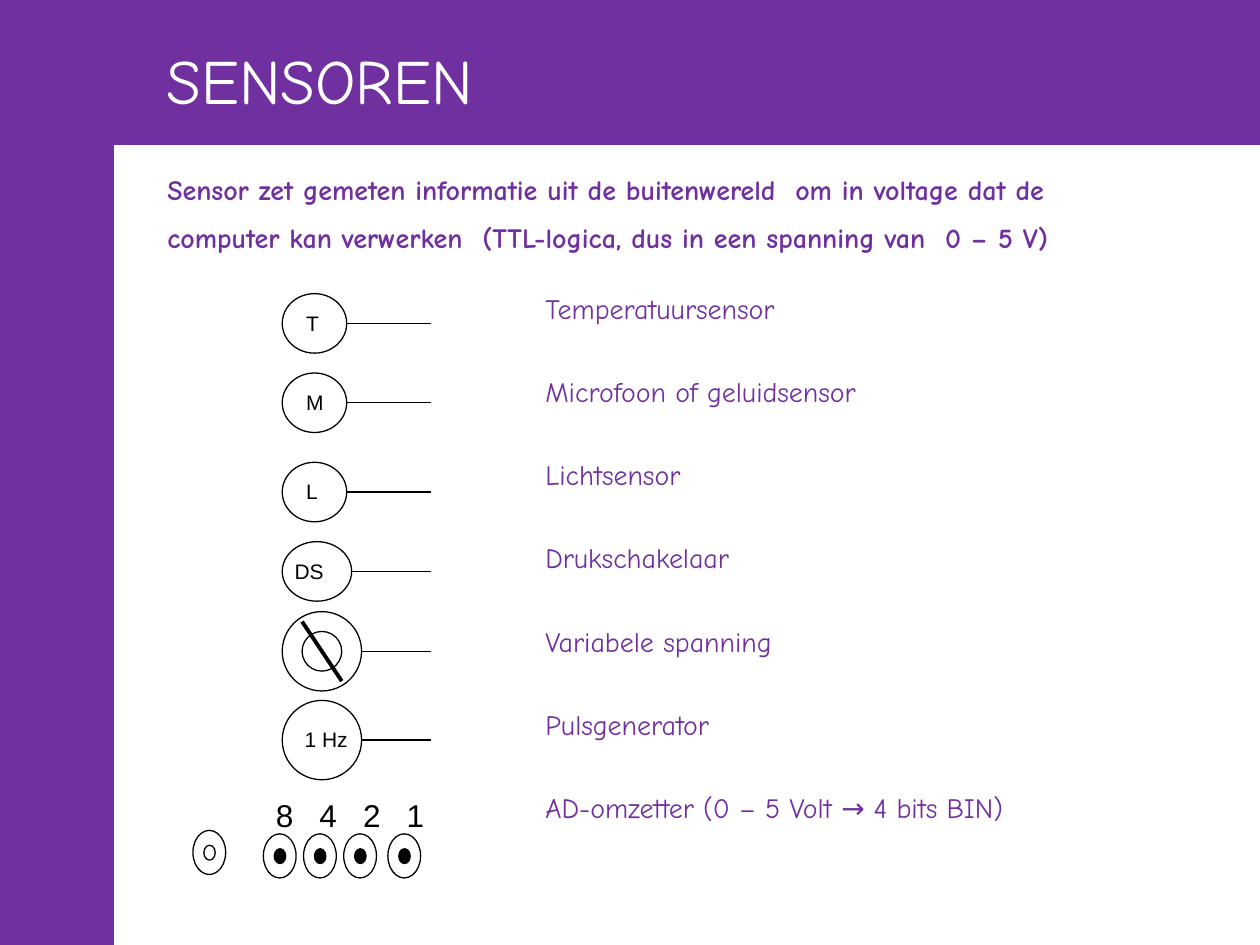
"""Build the slide about sensors, with a symbol next to each name."""
from lxml import etree
from pptx import Presentation
from pptx import util as u
from pptx.dml.color import RGBColor
from pptx.enum import shapes, text
from pptx.oxml.ns import qn

PURPLE, BLACK, WHITE = "7030A0", "000000", "FFFFFF"
SYMBOL_LEFT, WIRE_END = 5.69, 8.69


def color(value):
    return RGBColor.from_string(value)


def add_shape(kind, left, top, width, height, fill=None, line=BLACK):
    shape = slide.shapes.add_shape(kind, u.Cm(left), u.Cm(top), u.Cm(width), u.Cm(height))
    shape.shadow.inherit = False
    if fill:
        shape.fill.solid()
        shape.fill.fore_color.rgb = color(fill)
    else:
        shape.fill.background()
    shape.line.color.rgb = color(line)
    shape.line.width = u.Pt(0.75)
    return shape


presentation = Presentation()
presentation.slide_width, presentation.slide_height = u.Cm(25.4), u.Cm(19.05)
slide = presentation.slides.add_slide(presentation.slide_layouts[1])
title, body = slide.placeholders
rectangle, ellipse = shapes.MSO_SHAPE.RECTANGLE, shapes.MSO_SHAPE.OVAL

for width, height in [(25.4, 2.92), (2.29, 19.05)]:
    add_shape(rectangle, 0, 0, width, height, PURPLE, PURPLE)
slide.shapes.element.append(title.element)

frames = [(title, 3.1, 0.71, 21.62, 1.78), (body, 3.12, 3.35, 20.8, 15.6)]
for placeholder, left, top, width, height in frames:
    placeholder.left, placeholder.top = u.Cm(left), u.Cm(top)
    placeholder.width, placeholder.height = u.Cm(width), u.Cm(height)
    placeholder.text_frame.auto_size = text.MSO_AUTO_SIZE.NONE
    placeholder.text_frame.vertical_anchor = text.MSO_ANCHOR.TOP

title.text_frame.text = "SENSOREN"
heading = title.text_frame.paragraphs[0]
heading.alignment = text.PP_ALIGN.LEFT
heading.font.name, heading.font.size = "Comic Neue", u.Pt(36)
heading.font.color.rgb = color(WHITE)

intro = [
    "Sensor zet gemeten informatie uit de buitenwereld  om in voltage dat de",
    "computer kan verwerken  (TTL-logica, dus in een spanning van  0 – 5 V)",
]
sensors = [
    "Temperatuursensor",
    "Microfoon of geluidsensor",
    "Lichtsensor",
    "Drukschakelaar",
    "Variabele spanning",
    "Pulsgenerator",
    "AD-omzetter (0 – 5 Volt → 4 bits BIN)",
]
gaps = [0, 8.4, 21.6] + [28.6] * 6
body.text_frame.text = "\n".join(intro + sensors)
for index, (paragraph, gap) in enumerate(zip(body.text_frame.paragraphs, gaps)):
    is_intro = index < len(intro)
    paragraph.space_before, paragraph.line_spacing = u.Pt(gap), u.Pt(19)
    paragraph.font.name, paragraph.font.size = "Comic Neue", u.Pt(16)
    paragraph.font.bold = is_intro
    paragraph.font.color.rgb = color(PURPLE)
    properties = paragraph._p.get_or_add_pPr()
    properties.set("marL", str(u.Cm(0 if is_intro else 7.62)))
    properties.set("indent", "0")
    etree.SubElement(properties, qn("a:buNone"))
    properties.insert_element_before(properties.find(qn("a:buNone")), "a:tabLst", "a:defRPr")

symbols = [
    (6.52, 1.3, 1.2),
    (8.12, 1.3, 1.2),
    (9.92, 1.3, 1.2),
    (11.52, 1.4, 1.2),
    (13.13, 1.6, 1.6),
    (14.92, 1.6, 1.6),
]
wires = []
for middle, width, height in symbols:
    add_shape(ellipse, SYMBOL_LEFT, middle - height / 2, width, height)
    wires.append((SYMBOL_LEFT + width, middle, WIRE_END, middle, 0.75))
add_shape(ellipse, 6.09, 12.73, 0.8, 0.8)
wires.append((6.09, 12.53, 6.89, 13.73, 2.25))

for left, top, right, bottom, weight in wires:
    wire = slide.shapes.add_connector(
        shapes.MSO_CONNECTOR.STRAIGHT, u.Cm(left), u.Cm(top), u.Cm(right), u.Cm(bottom))
    wire.line.color.rgb = color(BLACK)
    wire.line.width = u.Pt(weight)
    etree.SubElement(wire.element.spPr, qn("a:effectLst"))

sockets = [(3.89, 16.74, None)] + [(left, 16.81, BLACK) for left in (5.31, 6.12, 6.93, 7.82)]
for left, top, fill in sockets:
    add_shape(ellipse, left, top, 0.66, 0.89)
    add_shape(ellipse, left + 0.22, top + 0.3, 0.23, 0.3, fill)

labels = [
    ("T", 5.92, 6.13, 1.7, 12),
    ("M", 5.92, 7.73, 1.7, 12),
    ("L", 5.92, 9.53, 1.7, 12),
    ("DS", 5.69, 11.13, 1.7, 12),
    ("1 Hz", 5.89, 14.53, 1.7, 12),
    ("8\t4\t2\t1", 5.31, 15.93, 3.81, 18),
]
for label, left, top, width, size in labels:
    box = slide.shapes.add_textbox(u.Cm(left), u.Cm(top), u.Cm(width), u.Cm(size * 0.06))
    box.text_frame.word_wrap = True
    box.text_frame.text = label
    paragraph = box.text_frame.paragraphs[0]
    paragraph.font.name, paragraph.font.size = "Arial", u.Pt(size)
    paragraph.font.color.rgb = color(BLACK)
    if "\t" in label:
        tabs = etree.Element(qn("a:tabLst"))
        for step in range(1, 4):
            etree.SubElement(tabs, qn("a:tab"), pos=str(u.Cm(0.88 * step)), algn="l")
        paragraph._p.get_or_add_pPr().insert_element_before(tabs, "a:defRPr")

presentation.save("out.pptx")
